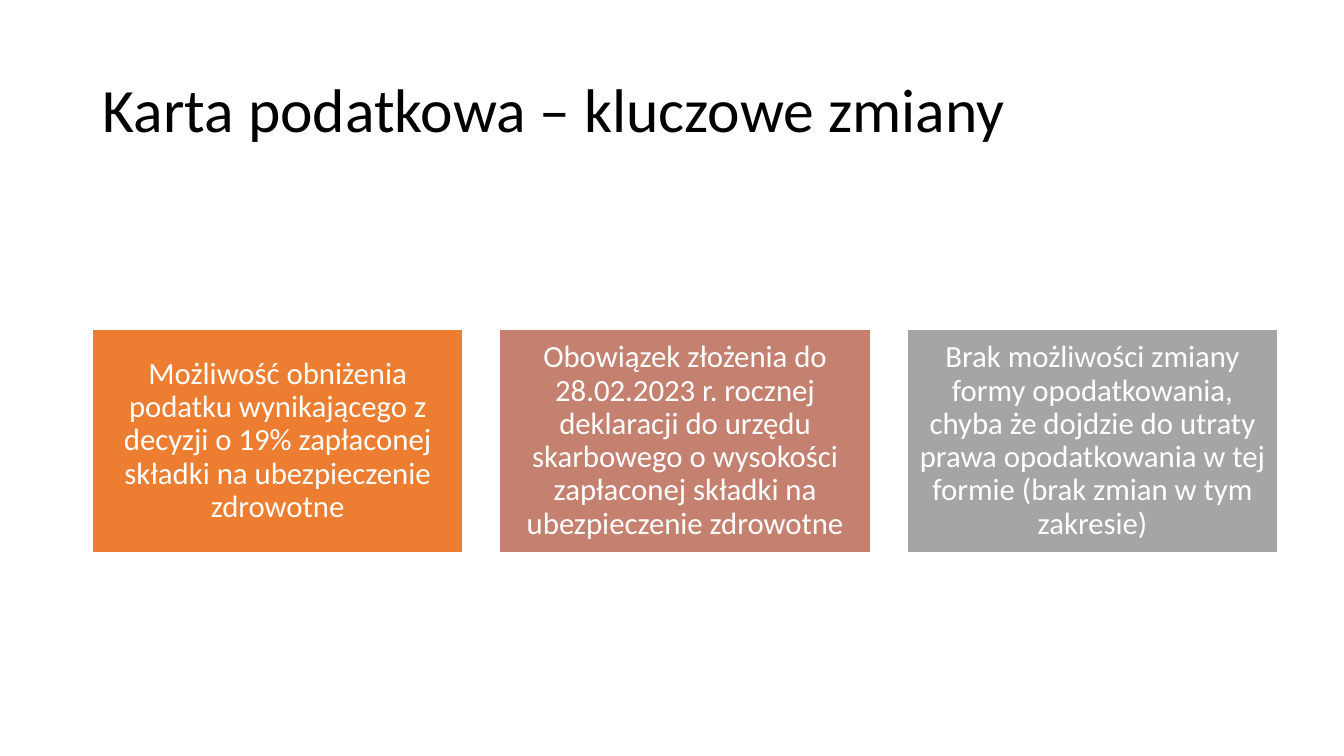
from pptx import Presentation
from pptx.dml.color import RGBColor
from pptx.enum.shapes import MSO_SHAPE as Shape
from pptx.enum.text import MSO_ANCHOR as Anchor, PP_ALIGN as Align
from pptx.util import Emu, Pt

TITLE = "Karta podatkowa – kluczowe zmiany"
CARDS = [
    ("ED7D31", "Możliwość obniżenia podatku wynikającego z decyzji o 19% "
               "zapłaconej składki na ubezpieczenie zdrowotne"),
    ("C48170", "Obowiązek złożenia do 28.02.2023 r. rocznej deklaracji do urzędu "
               "skarbowego o wysokości zapłaconej składki na ubezpieczenie zdrowotne"),
    ("A5A5A5", "Brak możliwości zmiany formy opodatkowania, chyba że dojdzie do utraty "
               "prawa opodatkowania w tej formie (brak zmian w tym zakresie)"),
]
LEFT, STEP = 88, 388


def px(n):
    return Emu(n * 9525)


def color(code):
    return RGBColor.from_string(code)


def style(item, **values):
    """Set each named attribute on item."""
    for name, value in values.items():
        setattr(item, name, value)


def write(shape, text, size, ink, align, pad):
    frame = shape.text_frame
    style(frame, word_wrap=True, vertical_anchor=Anchor.MIDDLE,
          margin_left=px(pad), margin_right=px(pad))
    para = frame.paragraphs[0]
    style(para, text=text, alignment=align, line_spacing=0.9)
    font = para.runs[0].font
    style(font, name="Calibri", size=Pt(size))
    font.color.rgb = color(ink)


def add_title(slide, text):
    box = slide.shapes.add_textbox(px(LEFT), px(38), px(1104), px(139))
    write(box, text, 44, "000000", Align.LEFT, 10)


def add_card(slide, left, fill, text):
    card = slide.shapes.add_shape(
        Shape.RECTANGLE, px(left), px(314), px(353), px(212))
    card.shadow.inherit = False
    card.fill.solid()
    card.fill.fore_color.rgb = color(fill)
    card.line.color.rgb = color("FFFFFF")
    card.line.width = Pt(1)
    write(card, text, 22, "FFFFFF", Align.CENTER, 9)


def main():
    deck = Presentation()
    style(deck, slide_width=px(1280), slide_height=px(720))
    slide = deck.slides.add_slide(deck.slide_layouts[6])
    add_title(slide, TITLE)
    for i, (fill, text) in enumerate(CARDS):
        add_card(slide, LEFT + i * STEP, fill, text)
    deck.save("out.pptx")


if __name__ == "__main__":
    main()
